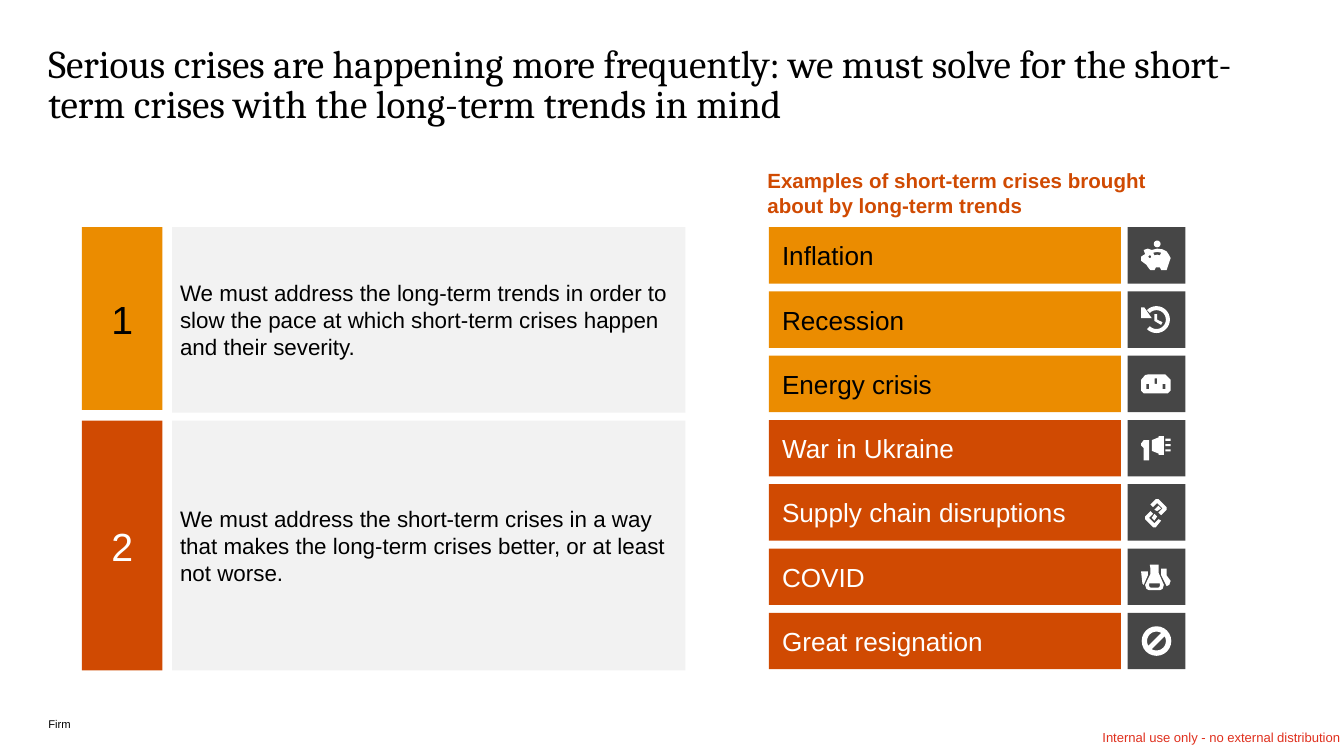
from math import cos, radians, sin

from pptx import Presentation
from pptx.dml.color import RGBColor
from pptx.enum.shapes import MSO_SHAPE
from pptx.enum.text import MSO_ANCHOR, PP_ALIGN
from pptx.util import Inches, Pt

RECT = MSO_SHAPE.RECTANGLE
TOP, MIDDLE, BOTTOM = MSO_ANCHOR.TOP, MSO_ANCHOR.MIDDLE, MSO_ANCHOR.BOTTOM
LEFT, CENTER, RIGHT = PP_ALIGN.LEFT, PP_ALIGN.CENTER, PP_ALIGN.RIGHT

BLACK, WHITE = "000000", "FFFFFF"
AMBER, ORANGE, DARK, PALE, RED = "EB8C00", "D04A02", "464646", "F2F2F2", "E0301E"


def arc(cx, cy, radius, start=0, end=360):
    angles = [radians(start + (end - start) * i / 24) for i in range(25)]
    return [(cx + radius * cos(a), cy + radius * sin(a)) for a in angles]


def box(x, y, w, h):
    return [(x, y), (x + w, y), (x + w, y + h), (x, y + h)]


PIGGY_BANK = [
    [(32, 23), (31, 21), (29, 18), (26, 16.5), (22, 16), (18, 17), (15, 16),
     (12, 17), (13, 20), (10, 22), (10, 25), (14, 28), (16, 31), (17, 32),
     (20, 32), (21, 30), (24, 30), (25, 32), (29, 32), (31, 26)],
    arc(16.5, 22, 1),
    [(20, 21), (19, 19), (22, 18.5), (25, 19), (24, 21), (22, 20.5)],
    arc(22, 12.5, 2.5),
]
CLOCK_BACK = [
    arc(21.5, 21, 10, 135, -135) + arc(21.5, 21, 7, -135, 135),
    [(10, 12), (12.5, 12), (18, 20), (10, 20)],
    [(20, 17), (22, 17), (22, 21), (26, 23), (25, 25), (20, 22)],
]
METER = [
    [(15, 14), (28, 14), (32, 18), (32, 26), (30, 28), (12, 28), (10, 26),
     (10, 18), (13, 14.5)],
    box(20, 17, 2, 4), box(26, 21, 2, 4), box(14, 21, 2, 4),
]
MEGAPHONE = [
    [(12, 15), (16, 15), (16, 30), (12, 30), (12, 21), (10, 19), (10, 17.5)],
    [(23, 12), (27, 12), (27, 26), (23, 26), (23, 25), (18, 23), (18, 15),
     (23, 13)],
    box(28, 14, 4, 1.5), box(28, 18, 4, 1.5), box(28, 22, 4, 1.5),
]
CHAIN = [
    [(23, 21), (26, 18), (22, 14), (19, 17), (17, 15), (21, 11), (23, 11),
     (29, 17), (29, 19), (25, 23)],
    [(23, 26), (25, 27), (21, 32), (19, 32), (13, 26), (13, 24), (17, 20),
     (19, 22), (16, 25), (20, 29)],
    [(20, 19), (23, 16), (25, 18), (22, 20)],
    [(18, 25), (20, 22), (22, 24), (20, 27)],
]
FLASKS = [
    [(16.5, 12), (23, 12), (23, 18), (27, 27), (26, 30), (24, 31), (16, 31),
     (14, 30), (13, 27), (17, 19), (17, 15)],
    [(10, 17), (15, 17), (15, 20), (12, 27), (11, 26)],
    [(25, 15), (29, 15), (29, 20), (32, 24), (31, 27), (29, 28), (25, 20)],
    [(16, 26), (24, 26), (24, 28), (23, 29), (17, 29), (16, 28)],
]
BAN = [arc(21.5, 21, 11), arc(21.5, 21, 7, 150, 300), arc(21.5, 21, 7, -30, 120)]

TITLE = ("Serious crises are happening more frequently: we must solve for the "
         "short-term crises with the long-term trends in mind")
HEADING = "Examples of short-term crises brought about by long-term trends"
FOOTER = "Firm"
NOTICE = "Internal use only - no external distribution"
ACTIONS = [
    ("1", "We must address the long-term trends in order to slow the pace at "
          "which short-term crises happen and their severity.",
     1.69, 1.36, 1.38, AMBER, BLACK),
    ("2", "We must address the short-term crises in a way that makes the "
          "long-term crises better, or at least not worse.",
     3.13, 1.86, 1.86, ORANGE, WHITE),
]
CRISES = [
    ("Inflation", AMBER, BLACK, PIGGY_BANK),
    ("Recession", AMBER, BLACK, CLOCK_BACK),
    ("Energy crisis", AMBER, BLACK, METER),
    ("War in Ukraine", ORANGE, WHITE, MEGAPHONE),
    ("Supply chain disruptions", ORANGE, WHITE, CHAIN),
    ("COVID", ORANGE, WHITE, FLASKS),
    ("Great resignation", ORANGE, WHITE, BAN),
]
ROW_TOP, ROW_BOTTOM, ROW_H = 1.69, 4.98, 0.42
ROW_PITCH = (ROW_BOTTOM - ROW_H - ROW_TOP) / (len(CRISES) - 1)
BAR_X, BAR_W, TILE_X, TILE_W = 5.72, 2.62, 8.39, 0.43


def rgb(value):
    return RGBColor.from_string(value)


def paint(sp, color):
    sp.shadow.inherit = False
    sp.fill.solid()
    sp.fill.fore_color.rgb = rgb(color)
    sp.line.fill.background()


def write(sp, text, size, color, font="Arial", bold=False, align=LEFT,
          anchor=TOP, inset=(0, 0), spacing=None):
    tf = sp.text_frame
    dx, dy = map(Inches, inset)
    frame = {"word_wrap": True, "vertical_anchor": anchor, "margin_left": dx,
             "margin_right": dx, "margin_top": dy, "margin_bottom": dy}
    for name, value in frame.items():
        setattr(tf, name, value)
    p = tf.paragraphs[0]
    p.alignment = align
    if spacing:
        p.line_spacing = spacing
    r = p.add_run()
    r.text = text
    for name, value in {"name": font, "size": Pt(size), "bold": bold}.items():
        setattr(r.font, name, value)
    r.font.color.rgb = rgb(color)


def add_text(s, at, text, size, color, **style):
    write(s.shapes.add_textbox(*map(Inches, at)), text, size, color, **style)


def add_rect(s, at, fill):
    sp = s.shapes.add_shape(RECT, *map(Inches, at))
    paint(sp, fill)
    return sp


def add_icon(s, x, y, outlines):
    scaled = [[(Inches(a / 100), Inches(b / 100)) for a, b in outline]
              for outline in outlines]
    builder = s.shapes.build_freeform(*scaled[0][0])
    for i, outline in enumerate(scaled):
        if i:
            builder.move_to(*outline[0])
        builder.add_line_segments(outline[1:], close=True)
    paint(builder.convert_to_shape(Inches(x), Inches(y)), WHITE)


prs = Presentation()
prs.slide_width = Inches(10)
prs.slide_height = prs.slide_width * 9 // 16
s = prs.slides.add_slide(prs.slide_layouts[6])

add_text(s, (0.36, 0.35, 9.27, 0.7), TITLE, 21, BLACK, font="Cambria", spacing=0.85)
add_text(s, (5.71, 1.25, 3.13, 0.4), HEADING, 11, ORANGE, bold=True)

for number, text, y, number_h, card_h, fill, color in ACTIONS:
    write(add_rect(s, (0.61, y, 0.6, number_h), fill), number, 21, color,
          align=CENTER, anchor=MIDDLE, inset=(0.07, 0.04))
    write(add_rect(s, (1.28, y, 3.82, card_h), PALE), text, 12, BLACK,
          anchor=MIDDLE, inset=(0.06, 0.03))

for i, (label, fill, color, icon) in enumerate(CRISES):
    y = ROW_TOP + i * ROW_PITCH
    write(add_rect(s, (BAR_X, y, BAR_W, ROW_H), fill), label, 14, color,
          anchor=MIDDLE, inset=(0.1, 0.05))
    add_rect(s, (TILE_X, y, TILE_W, ROW_H), DARK)
    add_icon(s, TILE_X, y, icon)

add_text(s, (0.36, 5.33, 4.49, 0.11), FOOTER, 6, BLACK, anchor=BOTTOM)
add_text(s, (8.05, 5.37, 1.92, 0.25), NOTICE, 7, RED, align=RIGHT, inset=(0, 0.07))

prs.save("out.pptx")
